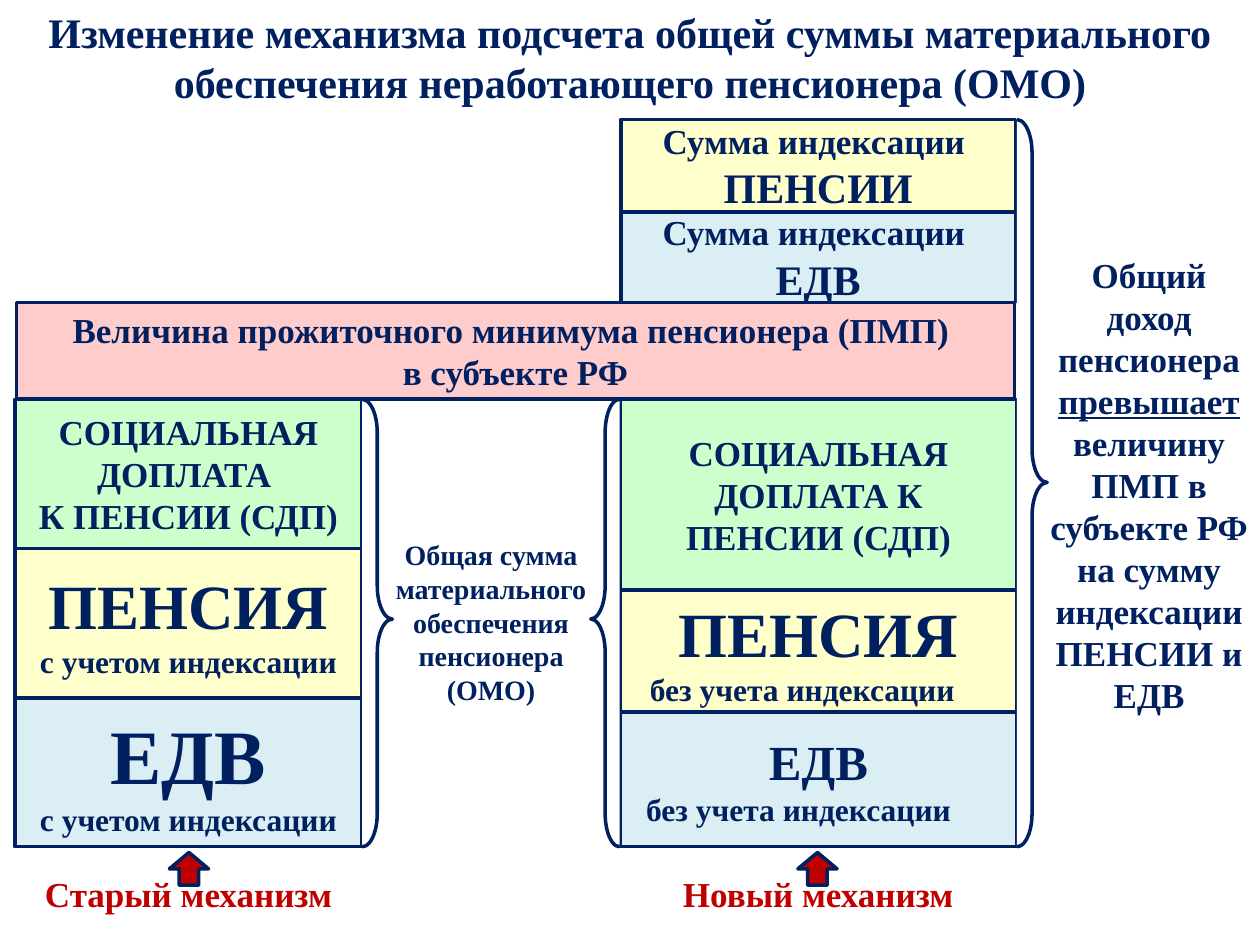
from dataclasses import dataclass

from pptx import Presentation
from pptx.dml.color import RGBColor
from pptx.enum.shapes import MSO_SHAPE
from pptx.enum.text import MSO_ANCHOR, PP_ALIGN
from pptx.util import Cm, Pt

RECTANGLE = MSO_SHAPE.RECTANGLE
BRACE = MSO_SHAPE.LEFT_BRACE
ARROW = MSO_SHAPE.RIGHT_ARROW
TOP, MIDDLE = MSO_ANCHOR.TOP, MSO_ANCHOR.MIDDLE
CENTER = PP_ALIGN.CENTER

FONT = "Times New Roman"
NAVY, RED, WHITE = "002060", "C00000", "FFFFFF"
BLUE, YELLOW, GREEN, PINK = "DBEEF4", "FFFFCC", "CCFFCC", "FFCCCC"


@dataclass(frozen=True)
class Box:
    left: float
    top: float
    width: float
    height: float

    def lengths(self) -> tuple:
        return Cm(self.left), Cm(self.top), Cm(self.width), Cm(self.height)


@dataclass(frozen=True)
class Line:
    text: str
    size: float = 20
    underlined: str = ""


@dataclass(frozen=True)
class Layer:
    height: float
    fill: str
    lines: tuple[Line, ...]
    shift: float = 0


@dataclass(frozen=True)
class Stack:
    left: float
    top: float
    width: float
    layers: tuple[Layer, ...]


@dataclass(frozen=True)
class Brace:
    box: Box
    curve: float
    point: float
    rotation: float = 0


def color(value: str) -> RGBColor:
    return RGBColor.from_string(value)


def write_text(frame, lines: tuple[Line, ...], *, ink: str = NAVY,
               anchor=TOP, shift: float = 0) -> None:
    frame.word_wrap = True
    frame.vertical_anchor = anchor
    if shift:
        frame.margin_right = Cm(0.25 + shift)
    for number, line in enumerate(lines):
        paragraph = frame.add_paragraph() if number else frame.paragraphs[0]
        paragraph.alignment = CENTER
        if shift and number == 0:
            properties = paragraph._p.get_or_add_pPr()
            properties.set("marL", str(Cm(shift)))
            properties.set("indent", "0")
        for text, underline in ((line.underlined, True), (line.text, False)):
            if text:
                run = paragraph.add_run()
                run.text = text
                font = run.font
                font.name, font.size, font.bold = FONT, Pt(line.size), True
                font.color.rgb = color(ink)
                if underline:
                    font.underline = True


def add_figure(slide, kind, box: Box, fill: str, rotation: float = 0):
    figure = slide.shapes.add_shape(kind, *box.lengths())
    figure.shadow.inherit = False
    figure.fill.solid()
    figure.fill.fore_color.rgb = color(fill)
    figure.line.color.rgb = color(NAVY)
    figure.line.width = Pt(2)
    figure.rotation = rotation
    return figure


def add_stack(slide, stack: Stack) -> None:
    top = stack.top
    for layer in stack.layers:
        box = Box(stack.left, top, stack.width, layer.height)
        block = add_figure(slide, RECTANGLE, box, layer.fill)
        write_text(block.text_frame, layer.lines, anchor=MIDDLE, shift=layer.shift)
        top += layer.height


def add_brace(slide, brace: Brace) -> None:
    figure = add_figure(slide, BRACE, brace.box, WHITE, brace.rotation)
    figure.adjustments[0] = brace.curve
    figure.adjustments[1] = brace.point


def add_caption(slide, box: Box, lines: tuple[Line, ...], *,
                ink: str = NAVY, anchor=TOP) -> None:
    caption = slide.shapes.add_textbox(*box.lengths())
    write_text(caption.text_frame, lines, ink=ink, anchor=anchor)


OLD_STACK = Stack(0.3, 8.05, 7, (
    Layer(3.01, GREEN, (Line("СОЦИАЛЬНАЯ ДОПЛАТА "), Line("К ПЕНСИИ (СДП)"))),
    Layer(3.01, YELLOW, (Line("ПЕНСИЯ", 36), Line("с учетом индексации", 18))),
    Layer(3, BLUE, (Line("ЕДВ", 44), Line("с учетом индексации", 18))),
))
NEW_STACK = Stack(12.5, 8.05, 8, (
    Layer(3.84, GREEN, (Line("СОЦИАЛЬНАЯ ДОПЛАТА К ПЕНСИИ (СДП)"),)),
    Layer(2.47, YELLOW, (Line("ПЕНСИЯ", 36), Line("без учета индексации", 18)), 0.65),
    Layer(2.71, BLUE, (Line("ЕДВ", 28), Line("без учета индексации", 18)), 0.8),
))
INDEXATION_STACK = Stack(12.52, 2.41, 7.95, (
    Layer(1.86, YELLOW, (Line("Сумма индексации "), Line("ПЕНСИИ", 24))),
    Layer(1.83, BLUE, (Line("Сумма индексации "), Line("ЕДВ", 24))),
))
BRACES = (
    Brace(Box(11.91, 8.05, 0.58, 9.02), 1.156, 0.491),
    Brace(Box(7.3, 8.05, 0.61, 9.02), 1.096, 0.509, 180),
    Brace(Box(20.5, 2.41, 0.61, 14.66), 1.104, 0.501, 180),
)
TOTAL_LINES = (
    Line("Общая сумма материального обеспечения пенсионера", 16),
    Line("(ОМО)", 16),
)
INCOME_LINES = (
    Line("Общий"),
    Line("доход пенсионера"),
    Line("величину ПМП в субъекте РФ", underlined="превышает "),
    Line("на сумму индексации ПЕНСИИ и ЕДВ"),
)
MINIMUM_LINES = (
    Line("Величина прожиточного минимума пенсионера (ПМП) "),
    Line("в субъекте РФ"),
)
MECHANISMS = (
    ("Старый механизм", 0.3, 7, 3.48),
    ("Новый механизм", 12.52, 7.95, 16.15),
)


def main() -> None:
    presentation = Presentation()
    presentation.slide_width, presentation.slide_height = Cm(25.4), Cm(19.05)
    slide = presentation.slides.add_slide(presentation.slide_layouts[5])

    title = slide.shapes.title
    title.left, title.top, title.width, title.height = Box(0, 0, 25.4, 2.31).lengths()
    write_text(title.text_frame, (Line(
        "Изменение механизма подсчета общей суммы материального "
        "обеспечения неработающего пенсионера (ОМО)", 24),))

    for stack in (OLD_STACK, NEW_STACK, INDEXATION_STACK):
        add_stack(slide, stack)
    minimum = add_figure(slide, RECTANGLE, Box(0.33, 6.1, 20.12, 1.95), PINK)
    write_text(minimum.text_frame, MINIMUM_LINES)

    for brace in BRACES:
        add_brace(slide, brace)
    add_caption(slide, Box(7.6, 10.72, 4.6, 3.68), TOTAL_LINES)
    add_caption(slide, Box(20.83, 4.98, 4.67, 9.65), INCOME_LINES)

    for name, left, width, arrow_left in MECHANISMS:
        add_caption(slide, Box(left, 17.32, width, 1.4), (Line(name),),
                    ink=RED, anchor=MIDDLE)
        add_figure(slide, ARROW, Box(arrow_left, 17.12, 0.66, 0.79), RED, 270)

    presentation.save("out.pptx")


if __name__ == "__main__":
    main()
